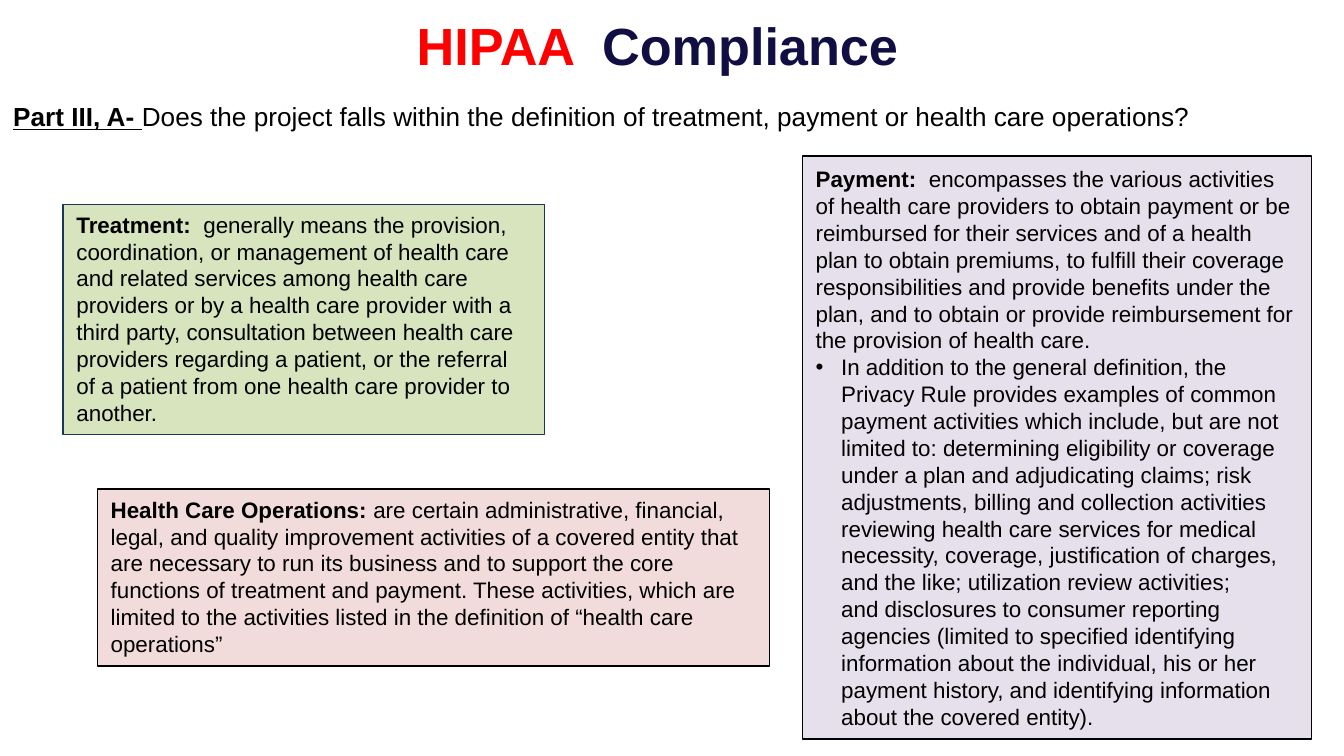
from dataclasses import dataclass

from lxml.etree import SubElement
from pptx import Presentation
from pptx.dml.color import RGBColor
from pptx.enum.shapes import MSO_SHAPE
from pptx.enum.text import MSO_ANCHOR, MSO_AUTO_SIZE, PP_ALIGN
from pptx.oxml.ns import qn
from pptx.util import Pt

PX = 4572
HARD_SPACE = chr(160)


@dataclass(frozen=True)
class Theme:
    font: str = "Arial"
    ink: str = "000000"
    accent: str = "FF0000"
    navy: str = "100E42"
    steel: str = "17375E"
    lilac: str = "E6E0EC"
    green: str = "D7E4BD"
    rose: str = "F2DCDB"
    title_size: int = 28
    question_size: int = 14
    body_size: int = 12
    line_width: float = 0.75
    bullet_indent: int = 38


def write(paragraph, text, *, font, size, color, bold=False, underline=False):
    run = paragraph.add_run()
    run.text = text
    run.font.name = font
    run.font.size = Pt(size)
    run.font.bold = bold
    run.font.underline = underline
    run.font.color.rgb = RGBColor.from_string(color)


class ComplianceSlide:
    def __init__(self, deck, theme):
        self.theme = theme
        self.slide = deck.slides.add_slide(deck.slide_layouts[5])

    def frame(self, shape, anchor, fit=MSO_AUTO_SIZE.NONE):
        text_frame = shape.text_frame
        text_frame.word_wrap = True
        text_frame.auto_size = fit
        text_frame.vertical_anchor = anchor
        text_frame.paragraphs[0].alignment = PP_ALIGN.LEFT
        return text_frame

    def title(self, box, highlight, rest):
        heading = self.slide.shapes.title
        heading.left, heading.top, heading.width, heading.height = (n * PX for n in box)
        line = self.frame(heading, MSO_ANCHOR.TOP).paragraphs[0]
        for text, color in ((highlight, self.theme.accent), (rest, self.theme.navy)):
            write(line, text, font=self.theme.font, size=self.theme.title_size,
                  color=color, bold=True)

    def question(self, box, label, text):
        area = self.slide.shapes.add_textbox(*(n * PX for n in box))
        line = self.frame(area, MSO_ANCHOR.MIDDLE).paragraphs[0]
        style = dict(font=self.theme.font, size=self.theme.question_size, color=self.theme.ink)
        write(line, label, bold=True, underline=True, **style)
        write(line, text, **style)

    def definition(self, box, term, meaning, fill, border, anchor=MSO_ANCHOR.TOP, example=None):
        card = self.slide.shapes.add_shape(MSO_SHAPE.RECTANGLE, *(n * PX for n in box))
        card.shadow.inherit = False
        card.fill.solid()
        card.fill.fore_color.rgb = RGBColor.from_string(fill)
        card.line.color.rgb = RGBColor.from_string(border)
        card.line.width = Pt(self.theme.line_width)
        content = self.frame(card, anchor, MSO_AUTO_SIZE.SHAPE_TO_FIT_TEXT)
        style = dict(font=self.theme.font, size=self.theme.body_size, color=self.theme.ink)
        write(content.paragraphs[0], term, bold=True, **style)
        write(content.paragraphs[0], meaning, **style)
        if example:
            write(self.bullet(content), example, **style)

    def bullet(self, content):
        item = content.add_paragraph()
        item.alignment = PP_ALIGN.LEFT
        properties = item._p.get_or_add_pPr()
        indent = self.theme.bullet_indent * PX
        properties.set("marL", str(indent))
        properties.set("indent", str(-indent))
        SubElement(properties, qn("a:buFont")).set("typeface", self.theme.font)
        SubElement(properties, qn("a:buChar")).set("char", "•")
        return item


def main():
    deck = Presentation()
    deck.slide_width, deck.slide_height = 2000 * PX, 1125 * PX
    theme = Theme()
    page = ComplianceSlide(deck, theme)

    page.title((600, 10, 1800, 122), "HIPAA ", " Compliance")
    page.question(
        (0, 139, 2160, 68), "Part III, A- ",
        "Does the project falls within the definition of treatment, payment "
        "or health care operations?")
    page.definition(
        (1194, 232, 758, 868), "Payment:",
        "  encompasses the various activities of health care providers to obtain payment "
        "or be reimbursed for their services and of a health plan to obtain premiums, to "
        "fulfill their coverage responsibilities and provide benefits under the plan, and "
        "to obtain or provide reimbursement for the provision of health care.",
        theme.lilac, theme.ink, MSO_ANCHOR.MIDDLE,
        "In addition to the general definition, the Privacy Rule provides examples of "
        "common payment activities which include, but are not limited to: determining "
        "eligibility or coverage under a plan and adjudicating claims; risk adjustments, "
        "billing and collection activities reviewing health care services for medical "
        f"necessity, coverage, justification of charges, and the like;{HARD_SPACE}utilization "
        f"review activities; and{HARD_SPACE}disclosures to consumer reporting agencies "
        "(limited to specified identifying information about the individual, his or her "
        "payment history, and identifying information about the covered entity).")
    page.definition(
        (94, 304, 716, 343), "Treatment: ",
        " generally means the provision, coordination, or management of health care and "
        "related services among health care providers or by a health care provider with a "
        "third party, consultation between health care providers regarding a patient, or "
        "the referral of a patient from one health care provider to another.",
        theme.green, theme.steel)
    page.definition(
        (145, 728, 1000, 263), "Health Care Operations: ",
        "are certain administrative, financial, legal, and quality improvement activities "
        "of a covered entity that are necessary to run its business and to support the "
        "core functions of treatment and payment. These activities, which are limited to "
        "the activities listed in the definition of “health care operations”",
        theme.rose, theme.ink)

    deck.save("out.pptx")


if __name__ == "__main__":
    main()
